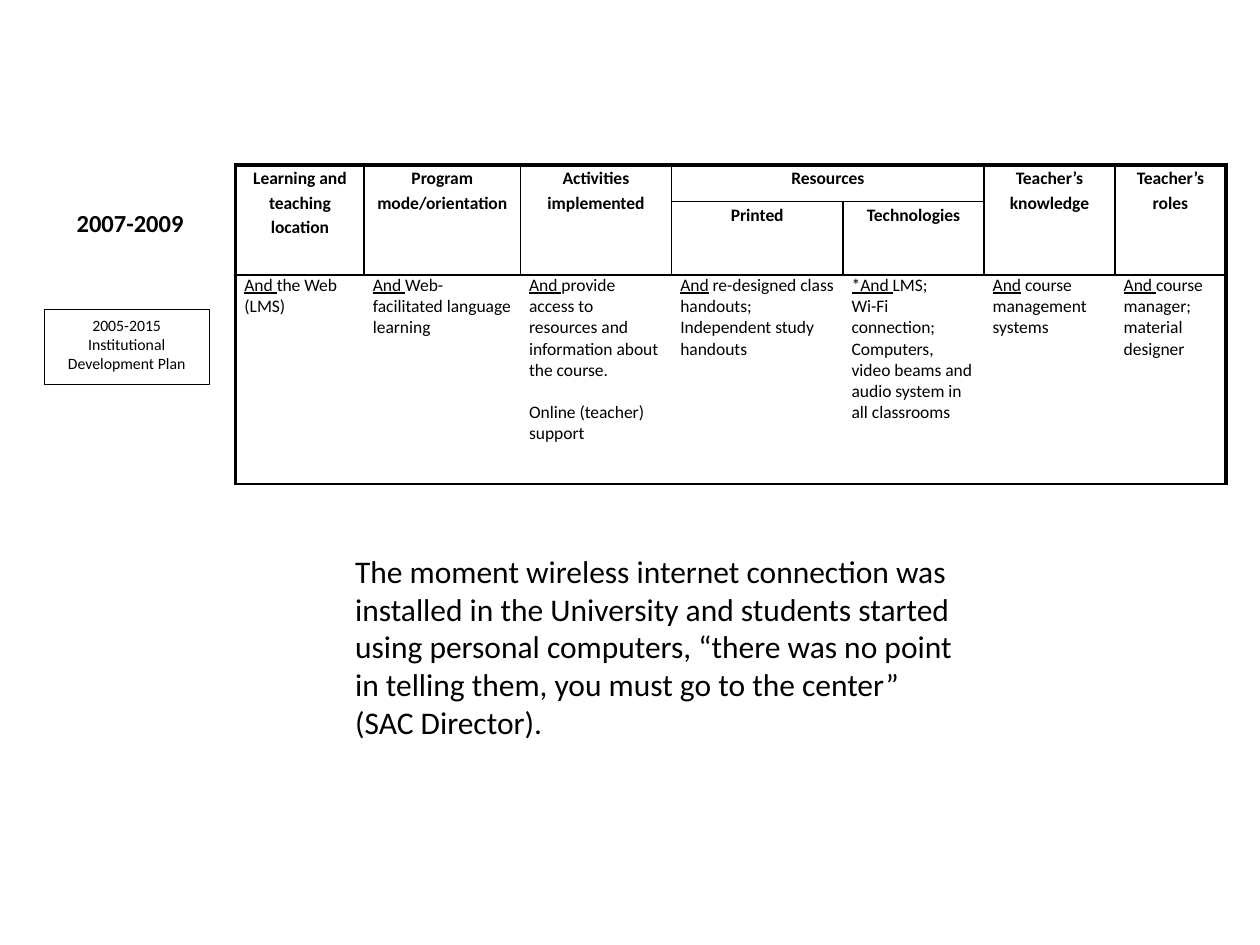
from lxml.etree import SubElement
from pptx import Presentation
from pptx.dml.color import RGBColor
from pptx.enum.shapes import MSO_SHAPE
from pptx.enum.text import MSO_ANCHOR, PP_ALIGN
from pptx.oxml.ns import qn
from pptx.util import Inches, Pt

BLACK = RGBColor(0, 0, 0)
WHITE = RGBColor(255, 255, 255)
THICK, THIN = 2.25, 1
NO_STYLE_NO_GRID = "{2D5ABB26-0587-4C30-8999-92F81FD0307C}"

COLUMN_WIDTHS = [1.02, 1.24, 1.2, 1.36, 1.12, 1.04, 0.88]
ROW_HEIGHTS = [0.29, 0.57, 1.66]
HEADINGS = {
    (0, 0): ["Learning and teaching", "location"],
    (0, 1): ["Program mode/orientation"],
    (0, 2): ["Activities implemented"],
    (0, 3): ["Resources"],
    (0, 5): ["Teacher’s knowledge"],
    (0, 6): ["Teacher’s roles"],
    (1, 3): ["Printed"],
    (1, 4): ["Technologies"],
}
# Per column: underlined opening, rest of the first paragraph, second paragraph
ADDITIONS = [
    ("And ", "the Web (LMS)", ""),
    ("And ", "Web-facilitated language learning", ""),
    ("And ", "provide access to resources and information about the course.",
     "Online (teacher) support"),
    ("And", " re-designed class handouts;", "Independent study handouts"),
    ("*And ", "LMS;", "Wi-Fi connection; Computers, video beams and audio system "
     "in all classrooms"),
    ("And", " course management systems", ""),
    ("And ", "course manager; material designer", ""),
]


def add_run(paragraph, text, size, bold=False, underline=False):
    run = paragraph.add_run()
    run.text = text
    run.font.name = "Calibri"
    run.font.size = Pt(size)
    run.font.bold = bold
    run.font.underline = underline
    run.font.color.rgb = BLACK


def set_border(cell, side, width):
    """Draw one cell side (L, R, T or B); a width of 0 leaves it empty."""
    line = SubElement(cell._tc.get_or_add_tcPr(), qn(f"a:ln{side}"), w=str(Pt(width)))
    if width:
        fill = SubElement(line, qn("a:solidFill"))
        SubElement(fill, qn("a:srgbClr"), val=str(BLACK))
    else:
        SubElement(line, qn("a:noFill"))


prs = Presentation()
prs.slide_width, prs.slide_height = Inches(10), Inches(7.5)
slide = prs.slides.add_slide(prs.slide_layouts[6])

# Table of changes
frame = slide.shapes.add_table(
    len(ROW_HEIGHTS), len(COLUMN_WIDTHS), Inches(1.87), Inches(1.31),
    Inches(sum(COLUMN_WIDTHS)), Inches(sum(ROW_HEIGHTS)))
changes = frame.table
changes.first_row = changes.horz_banding = False
changes._tbl.tblPr.find(qn("a:tableStyleId")).text = NO_STYLE_NO_GRID
for column, width in zip(changes.columns, COLUMN_WIDTHS):
    column.width = Inches(width)
for row, height in zip(changes.rows, ROW_HEIGHTS):
    row.height = Inches(height)

for col in (0, 1, 2, 5, 6):
    changes.cell(0, col).merge(changes.cell(1, col))
changes.cell(0, 3).merge(changes.cell(0, 4))

last_col = len(COLUMN_WIDTHS) - 1
for r in range(len(ROW_HEIGHTS)):
    for c in range(len(COLUMN_WIDTHS)):
        cell = changes.cell(r, c)
        cell.margin_left = cell.margin_right = Inches(0.07)
        cell.margin_top = cell.margin_bottom = 0
        inner = THIN if r < 2 else 0
        inside_resources = (r, c) == (0, 4)
        inside_heading = r == 1 and cell.is_spanned
        set_border(cell, "L", THICK if c == 0 else 0 if inside_resources else inner)
        set_border(cell, "R", THICK if c == last_col else inner)
        set_border(cell, "T", THICK if r == 0 else 0 if inside_heading else THIN)
        set_border(cell, "B", THIN)
        cell.fill.background()
        if cell.is_spanned:
            SubElement(cell.text_frame.paragraphs[0]._p, qn("a:endParaRPr"), sz="1000")

for (r, c), lines in HEADINGS.items():
    text = changes.cell(r, c).text_frame
    for i, line in enumerate(lines):
        paragraph = text.add_paragraph() if i else text.paragraphs[0]
        paragraph.alignment = PP_ALIGN.CENTER
        paragraph.line_spacing = 1.15
        add_run(paragraph, line, 10, bold=True)

for c, (opening, rest, second) in enumerate(ADDITIONS):
    text = changes.cell(2, c).text_frame
    add_run(text.paragraphs[0], opening, 10, underline=True)
    add_run(text.paragraphs[0], rest, 10)
    if second:
        paragraph = text.add_paragraph()
        add_run(paragraph, second, 10)
        if c == 2:
            paragraph.space_before = Pt(12)

# Period and plan beside the table
period = slide.shapes.add_textbox(Inches(0.51), Inches(1.6), Inches(1.1), Inches(0.34))
period.text_frame.word_wrap = True
add_run(period.text_frame.paragraphs[0], "2007-2009", 14, bold=True)

plan = slide.shapes.add_shape(
    MSO_SHAPE.RECTANGLE, Inches(0.35), Inches(2.46), Inches(1.31), Inches(0.59))
plan.shadow.inherit = False
plan.fill.solid()
plan.fill.fore_color.rgb = WHITE
plan.line.color.rgb = BLACK
plan.line.width = Pt(0.5)
plan.text_frame.word_wrap = True
plan.text_frame.vertical_anchor = MSO_ANCHOR.TOP
plan.text_frame.paragraphs[0].alignment = PP_ALIGN.CENTER
add_run(plan.text_frame.paragraphs[0], "2005-2015 Institutional Development Plan", 9)

# Quotation
quotation = slide.shapes.add_textbox(
    Inches(2.72), Inches(4.33), Inches(4.96), Inches(1.62))
quotation.text_frame.word_wrap = True
add_run(
    quotation.text_frame.paragraphs[0],
    "The moment wireless internet connection was installed in the University and "
    "students started using personal computers, “there was no point in telling them, "
    "you must go to the center” (SAC Director).", 18)

prs.save("out.pptx")
